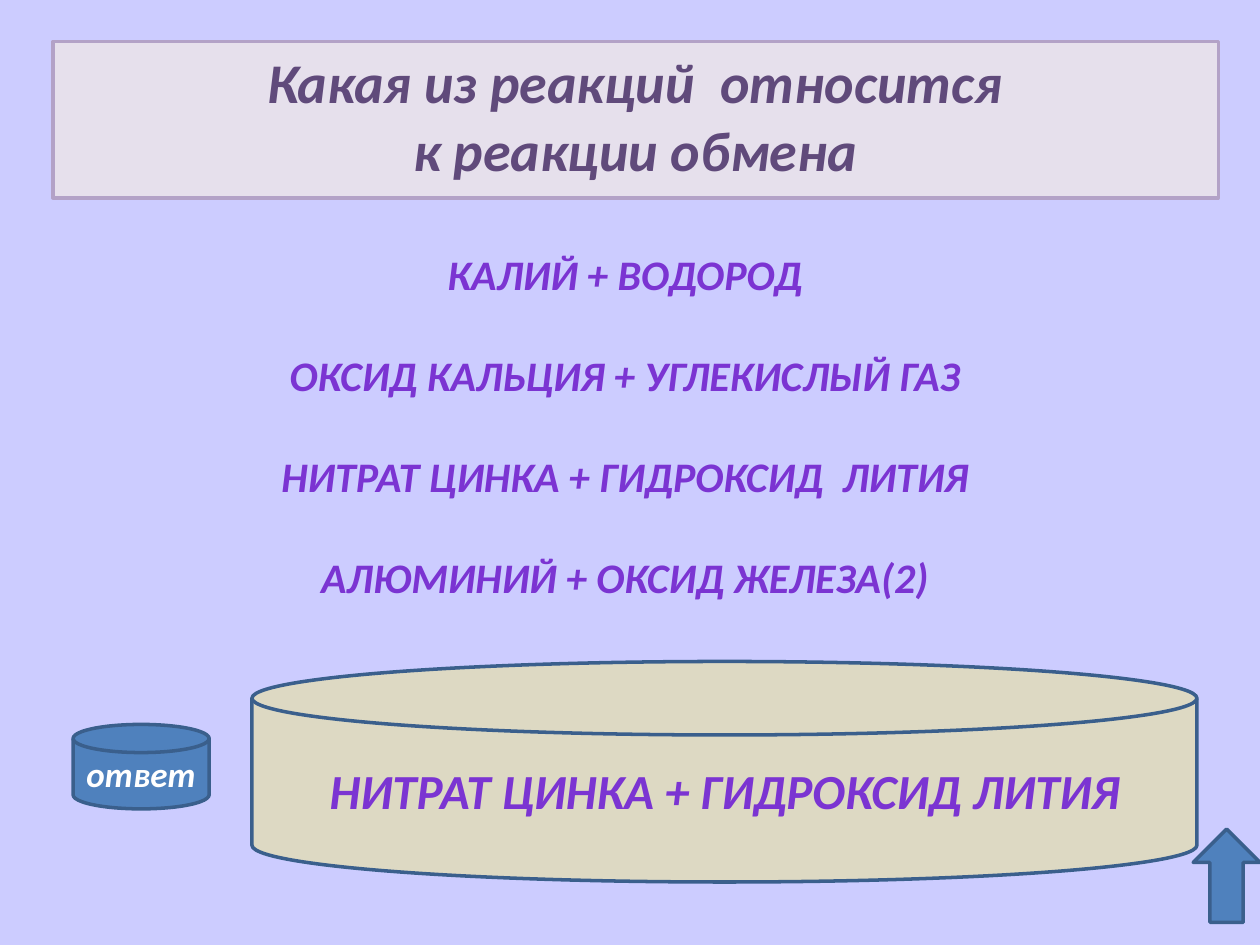
from dataclasses import dataclass

import pptx
import pptx.dml.color
import pptx.enum.shapes
import pptx.enum.text
import pptx.oxml
import pptx.oxml.ns
import pptx.util

Inches = pptx.util.Inches
Pt = pptx.util.Pt
Shapes = pptx.enum.shapes.MSO_SHAPE
Anchor = pptx.enum.text.MSO_ANCHOR


@dataclass(frozen=True)
class Theme:
    font: str = "Calibri"
    background: str = "CCCCFF"
    title_fill: str = "E6E0EC"
    title_line: str = "B3A2C7"
    title_text: str = "604A7B"
    reaction_text: str = "7B34D2"
    button_fill: str = "4F81BD"
    button_text: str = "FFFFFF"
    answer_fill: str = "DDD9C3"
    outline: str = "3A5F8C"
    line_width: float = 2
    title_size: float = 32
    reaction_size: float = 24
    reaction_gap: float = 29
    button_size: float = 20
    answer_size: float = 28


@dataclass(frozen=True)
class Box:
    left: float
    top: float
    width: float
    height: float

    def lengths(self) -> tuple:
        return tuple(Inches(v) for v in (self.left, self.top, self.width, self.height))


@dataclass(frozen=True)
class Figure:
    preset: Shapes
    box: Box
    fill: str
    text: str = ""
    size: float = 0
    color: str = ""


THEME = Theme()
TITLE_BOX = Box(0.42, 0.33, 9.25, 1.24)
TITLE_LINES = ["Какая из реакций  относится", "к реакции обмена"]
REACTIONS_BOX = Box(1.17, 1.92, 7.58, 2.93)
REACTIONS = [
    "КАЛИЙ + ВОДОРОД",
    "ОКСИД КАЛЬЦИЯ + УГЛЕКИСЛЫЙ ГАЗ",
    "НИТРАТ ЦИНКА + ГИДРОКСИД  ЛИТИЯ",
    "АЛЮМИНИЙ + ОКСИД ЖЕЛЕЗА(2)",
]
FIGURES = [
    Figure(Shapes.FLOWCHART_MAGNETIC_DISK, Box(0.58, 5.75, 1.08, 0.67),
           THEME.button_fill, "ответ", THEME.button_size, THEME.button_text),
    Figure(Shapes.FLOWCHART_MAGNETIC_DISK, Box(2, 5.25, 7.5, 1.75),
           THEME.answer_fill, "НИТРАТ ЦИНКА + ГИДРОКСИД ЛИТИЯ",
           THEME.answer_size, THEME.reaction_text),
    Figure(Shapes.UP_ARROW, Box(9.47, 6.58, 0.53, 0.74), THEME.button_fill),
]


def rgb(value: str) -> pptx.dml.color.RGBColor:
    return pptx.dml.color.RGBColor.from_string(value)


def paint(shape, fill: str, line: str) -> None:
    shape.fill.solid()
    shape.fill.fore_color.rgb = rgb(fill)
    shape.line.color.rgb = rgb(line)
    shape.line.width = Pt(THEME.line_width)


def write(frame, lines: list[str], size: float, color: str,
          anchor: Anchor = Anchor.TOP, gap: float = 0) -> None:
    frame.word_wrap = True
    frame.auto_size = pptx.enum.text.MSO_AUTO_SIZE.NONE
    frame.vertical_anchor = anchor
    for index, line in enumerate(lines):
        paragraph = frame.add_paragraph() if index else frame.paragraphs[0]
        paragraph.alignment = pptx.enum.text.PP_ALIGN.CENTER
        if index and gap:
            paragraph.space_before = Pt(gap)
        run = paragraph.add_run()
        run.text = line
        run.font.name = THEME.font
        run.font.size = Pt(size)
        run.font.bold = True
        run.font.italic = True
        run.font.color.rgb = rgb(color)


def draw_title(slide) -> None:
    title = slide.shapes.title
    title.left, title.top, title.width, title.height = TITLE_BOX.lengths()
    title.element.spPr.append(pptx.oxml.parse_xml(
        f'<a:prstGeom {pptx.oxml.ns.nsdecls("a")} prst="round2SameRect"><a:avLst/></a:prstGeom>'
    ))
    paint(title, THEME.title_fill, THEME.title_line)
    write(title.text_frame, TITLE_LINES, THEME.title_size, THEME.title_text)


def draw_reactions(slide) -> None:
    reactions = slide.shapes.add_textbox(*REACTIONS_BOX.lengths())
    write(reactions.text_frame, REACTIONS, THEME.reaction_size,
          THEME.reaction_text, gap=THEME.reaction_gap)


def draw_figure(slide, figure: Figure) -> None:
    shape = slide.shapes.add_shape(figure.preset, *figure.box.lengths())
    shape.shadow.inherit = False
    paint(shape, figure.fill, THEME.outline)
    if figure.text:
        write(shape.text_frame, [figure.text], figure.size, figure.color, Anchor.MIDDLE)


def main() -> None:
    deck = pptx.Presentation()
    deck.slide_width, deck.slide_height = Inches(10), Inches(7.5)
    slide = deck.slides.add_slide(deck.slide_layouts[5])
    slide.background.fill.solid()
    slide.background.fill.fore_color.rgb = rgb(THEME.background)
    draw_title(slide)
    draw_reactions(slide)
    for figure in FIGURES:
        draw_figure(slide, figure)
    deck.save("out.pptx")


if __name__ == "__main__":
    main()
